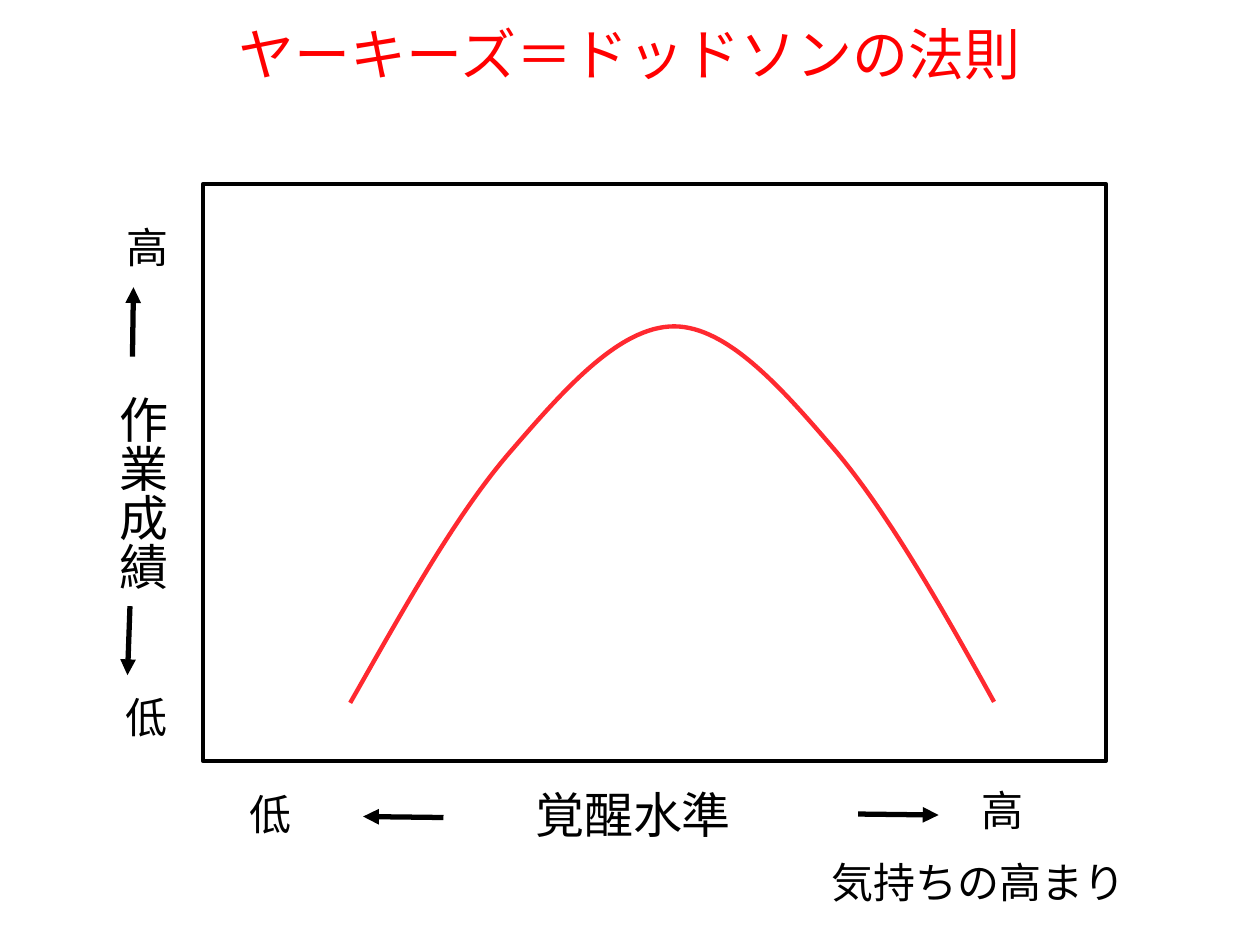
"""Builds a slide on the Yerkes-Dodson law: an inverted U of performance against arousal."""
import pptx
import pptx.dml.color
import pptx.enum.shapes
import pptx.enum.text
import pptx.oxml.ns
import pptx.util
from lxml import etree

Cm = pptx.util.Cm
Pt = pptx.util.Pt
qn = pptx.oxml.ns.qn
RGBColor = pptx.dml.color.RGBColor

BLACK = RGBColor(0x00, 0x00, 0x00)
TITLE_RED = RGBColor(0xFF, 0x00, 0x00)
CURVE_RED = RGBColor(0xFF, 0x29, 0x30)
FONT = "Noto Sans CJK JP"

TITLE = ("ヤーキーズ＝ドッドソンの法則", 32, (1.27, 0.25, 22.86, 1.63))
HORIZONTAL_LABELS = [
    ("覚醒水準", 28, (10.54, 15.7, 4.93, 1.45)),
    ("気持ちの高まり", 24, (16.51, 17.15, 6.86, 1.27)),
    (" 高", 24, (19.35, 15.7, 1.7, 1.27)),
    ("低", 24, (4.78, 15.77, 1.52, 1.27)),
]
VERTICAL_LABELS = [
    ("作業成績", 28, (1.88, 7.72, 1.7, 4.55)),
    ("高", 24, (2.03, 4.32, 1.55, 1.24)),
    (" 低", 24, (1.96, 13.61, 1.55, 1.73)),
]
PLOT_FRAME = (4.09, 3.71, 18.21, 11.63)
CURVE_START = (7.06, 14.17)
CURVE_BEZIERS = [
    [(8.13, 12.29), (9.17, 10.41), (10.26, 9.14)],
    [(11.33, 7.9), (12.47, 6.58), (13.59, 6.58)],
    [(14.68, 6.58), (15.8, 7.87), (16.87, 9.12)],
    [(17.93, 10.39), (19, 12.27), (20.04, 14.15)],
]
ARROWS = [
    ((17.3, 16.41), (18.92, 16.43)),
    ((8.94, 16.48), (7.32, 16.46)),
    ((2.67, 7.19), (2.69, 5.79)),
    ((2.62, 12.22), (2.57, 13.61)),
]


def lengths(values):
    return [Cm(value) for value in values]


def set_outline(shape, color, width):
    shape.line.color.rgb = color
    shape.line.width = Pt(width)


def add_label(slide, text, size, box, color=BLACK, vertical=False):
    shape = slide.shapes.add_textbox(*lengths(box))
    frame = shape.text_frame
    frame.word_wrap = True
    if vertical:
        frame._txBody.bodyPr.set("vert", "eaVert")
    paragraph = frame.paragraphs[0]
    paragraph.text = text
    paragraph.font.size = Pt(size)
    paragraph.font.name = FONT
    paragraph.font.color.rgb = color
    properties = paragraph._p.find(".//" + qn("a:defRPr"))
    etree.SubElement(properties, qn("a:ea"), typeface=FONT)
    return shape


def add_title(slide):
    frame = add_label(slide, *TITLE, color=TITLE_RED).text_frame
    frame.vertical_anchor = pptx.enum.text.MSO_ANCHOR.MIDDLE
    frame.paragraphs[0].alignment = pptx.enum.text.PP_ALIGN.CENTER


def add_plot_frame(slide):
    frame = slide.shapes.add_shape(
        pptx.enum.shapes.MSO_SHAPE.RECTANGLE, *lengths(PLOT_FRAME))
    frame.shadow.inherit = False
    frame.fill.background()
    set_outline(frame, BLACK, 2.25)


def add_curve(slide):
    builder = slide.shapes.build_freeform(*lengths(CURVE_START))
    points = [lengths(point) for bezier in CURVE_BEZIERS for point in bezier]
    builder.add_line_segments(points, close=False)
    curve = builder.convert_to_shape()
    curve.shadow.inherit = False
    curve.fill.background()
    set_outline(curve, CURVE_RED, 2.5)
    outline = curve._element.find(".//" + qn("a:path"))
    segments = outline.findall(qn("a:lnTo"))
    for first in range(0, len(segments), 3):
        bezier = etree.SubElement(outline, qn("a:cubicBezTo"))
        for segment in segments[first:first + 3]:
            bezier.append(segment[0])
            outline.remove(segment)


def add_arrow(slide, start, tip):
    arrow = slide.shapes.add_connector(
        pptx.enum.shapes.MSO_CONNECTOR.STRAIGHT, *lengths(start + tip))
    set_outline(arrow, BLACK, 3)
    etree.SubElement(arrow.line._get_or_add_ln(), qn("a:tailEnd"), type="triangle")
    etree.SubElement(arrow._element.spPr, qn("a:effectLst"))


def main():
    presentation = pptx.Presentation()
    presentation.slide_width = Cm(25.4)
    presentation.slide_height = Cm(19.05)
    slide = presentation.slides.add_slide(presentation.slide_layouts[6])
    add_title(slide)
    add_plot_frame(slide)
    add_curve(slide)
    for label in HORIZONTAL_LABELS:
        add_label(slide, *label)
    for label in VERTICAL_LABELS:
        add_label(slide, *label, vertical=True)
    for start, tip in ARROWS:
        add_arrow(slide, start, tip)
    presentation.save("out.pptx")


if __name__ == "__main__":
    main()
